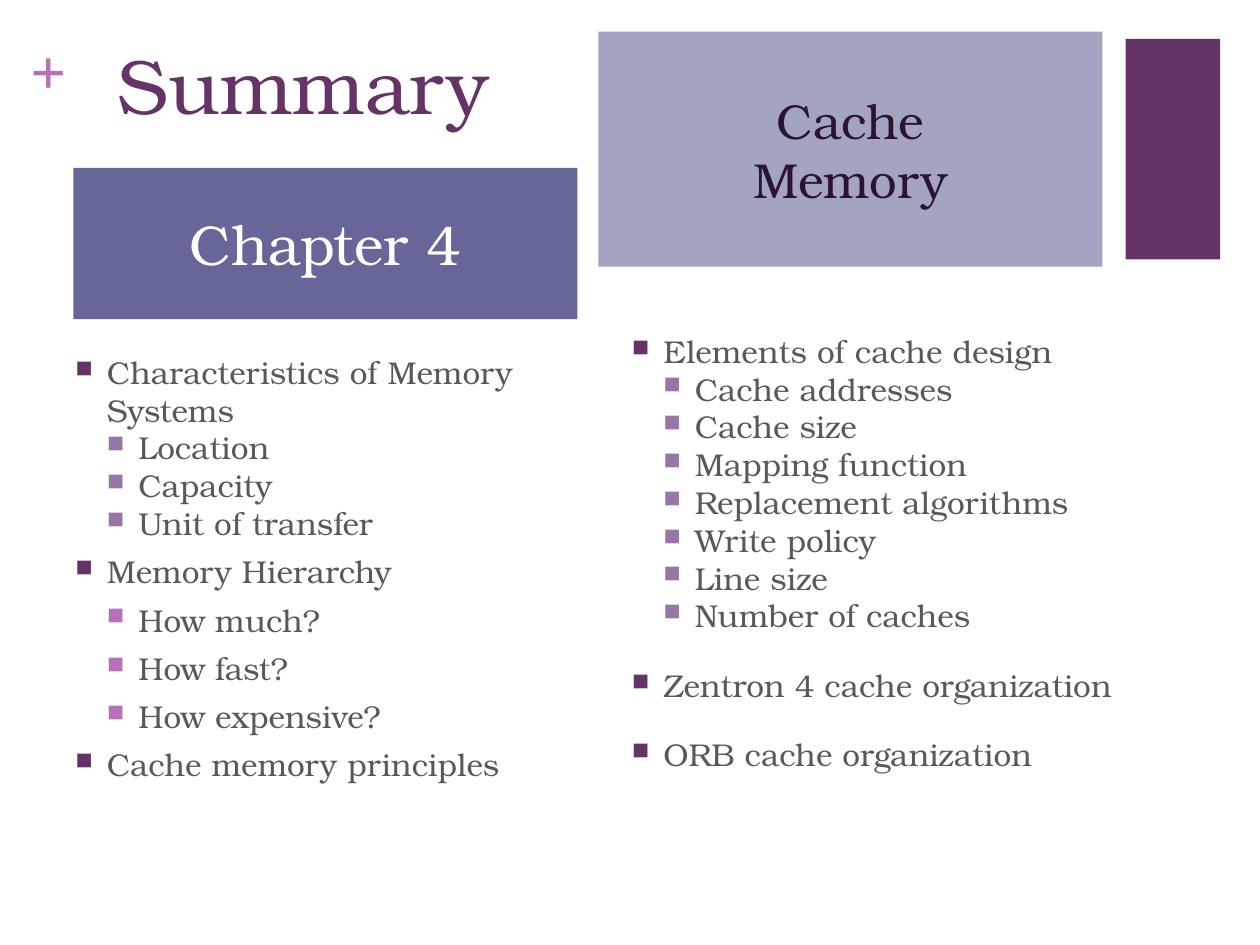
from dataclasses import dataclass

from lxml import etree
from pptx import Presentation
from pptx.dml.color import RGBColor
from pptx.enum.shapes import MSO_SHAPE
from pptx.enum.text import MSO_ANCHOR, PP_ALIGN
from pptx.oxml.ns import qn
from pptx.util import Inches, Pt

RECT = MSO_SHAPE.RECTANGLE
TOP, MIDDLE = MSO_ANCHOR.TOP, MSO_ANCHOR.MIDDLE
LEFT, CENTER = PP_ALIGN.LEFT, PP_ALIGN.CENTER
COLS, ROWS = 120, 90
WIDE, HIGH = Inches(10), Inches(7.5)


@dataclass(frozen=True)
class Theme:
    font: str = "TeX Gyre Bonum"
    mark_font: str = "Times New Roman"
    plum: str = "663366"
    orchid: str = "B870B8"
    lilac: str = "9875A7"
    slate: str = "666699"
    mist: str = "A3A3C2"
    dark: str = "2B142D"
    gray: str = "595959"
    white: str = "FFFFFF"
    title: int = 44
    mark: int = 36
    chapter: int = 32
    topic: int = 28
    body: int = 18


THEME = Theme()

# Kind of item: level, indent in inches, space before in points, bullet colour
HEAD = (0, 0.25, 6, THEME.plum)
POINT = (1, 0.5, 6, THEME.orchid)
PART = (2, 0.5, 0, THEME.lilac)
TOPIC = (1, 0.25, 18, THEME.plum)

MEMORY = [
    (HEAD, ["Characteristics of Memory Systems"]),
    (PART, ["Location", "Capacity", "Unit of transfer"]),
    (HEAD, ["Memory Hierarchy"]),
    (POINT, ["How much?", "How fast?", "How expensive?"]),
    (HEAD, ["Cache memory principles"]),
]
DESIGN = [
    (TOPIC, ["Elements of cache design"]),
    (PART, ["Cache addresses", "Cache size", "Mapping function",
            "Replacement algorithms", "Write policy", "Line size",
            "Number of caches"]),
    (TOPIC, ["Zentron 4 cache organization", "ORB cache organization"]),
]


def place(col, row, cols, rows):
    """Turn grid columns and rows into a left, top, width and height."""
    return (int(WIDE * col / COLS), int(HIGH * row / ROWS),
            int(WIDE * cols / COLS), int(HIGH * rows / ROWS))


def apply(thing, values):
    for name, value in values.items():
        setattr(thing, name, value)


def write(para, text, size, color, font=THEME.font, bold=False):
    run = para.add_run()
    run.text = text
    apply(run.font, {"name": font, "size": Pt(size), "bold": bold})
    run.font.color.rgb = RGBColor.from_string(color)


def lines(frame, texts):
    """Yield a paragraph for each text, using the first one already there."""
    for i, text in enumerate(texts):
        yield (frame.add_paragraph() if i else frame.paragraphs[0]), text


def label(slide, grid, text, size, color, inset=(0.1, 0.05), **style):
    frame = slide.shapes.add_textbox(*place(*grid)).text_frame
    side, edge = map(Inches, inset)
    apply(frame, {"word_wrap": True, "vertical_anchor": TOP,
                  "margin_left": side, "margin_right": side,
                  "margin_top": edge, "margin_bottom": edge})
    write(frame.paragraphs[0], text, size, color, **style)


def panel(slide, grid, fill, texts=(), size=THEME.body, color=THEME.white):
    shape = slide.shapes.add_shape(RECT, *place(*grid))
    shape.shadow.inherit = False
    shape.fill.solid()
    shape.fill.fore_color.rgb = RGBColor.from_string(fill)
    shape.line.fill.background()
    frame = shape.text_frame
    apply(frame, {"word_wrap": True, "vertical_anchor": MIDDLE,
                  "margin_top": 0, "margin_bottom": 0})
    for para, text in lines(frame, texts):
        para.alignment = CENTER
        write(para, text, size, color)


def bullet(para, indent, color):
    props = para._p.get_or_add_pPr()
    props.set("marL", str(Inches(indent)))
    props.set("indent", str(-Inches(0.25)))
    tint = etree.SubElement(props, qn("a:buClr"))
    etree.SubElement(tint, qn("a:srgbClr"), val=color)
    etree.SubElement(props, qn("a:buSzPct"), val="75000")
    etree.SubElement(props, qn("a:buChar"), char="■")


def outline(slide, grid, groups):
    frame = slide.shapes.add_textbox(*place(*grid)).text_frame
    frame.word_wrap = True
    items = [(kind, text) for kind, texts in groups for text in texts]
    for i, (para, (kind, text)) in enumerate(lines(frame, items)):
        level, indent, gap, color = kind
        bullet(para, indent, color)
        apply(para, {"level": level, "alignment": LEFT,
                     "space_before": Pt(gap if i else 0)})
        write(para, text, THEME.body, THEME.gray)


def main():
    deck = Presentation()
    apply(deck, {"slide_width": WIDE, "slide_height": HIGH})
    slide = deck.slides.add_slide(deck.slide_layouts[6])
    panel(slide, (107.2, 3.7, 9, 21), THEME.plum)
    label(slide, (2.9, 3, 3.5, 7.3), "+", THEME.mark, THEME.orchid,
          inset=(0, 0), font=THEME.mark_font, bold=True)
    label(slide, (10, 3, 45, 14.6), "Summary", THEME.title, THEME.plum)
    outline(slide, (6, 33, 48, 57), MEMORY)
    outline(slide, (59, 31, 50, 62), DESIGN)
    panel(slide, (7, 16, 48, 14.4), THEME.slate, ["Chapter 4"],
          THEME.chapter, THEME.white)
    panel(slide, (57, 3, 48, 22.4), THEME.mist, ["Cache", "Memory"],
          THEME.topic, THEME.dark)
    deck.save("out.pptx")


if __name__ == "__main__":
    main()
